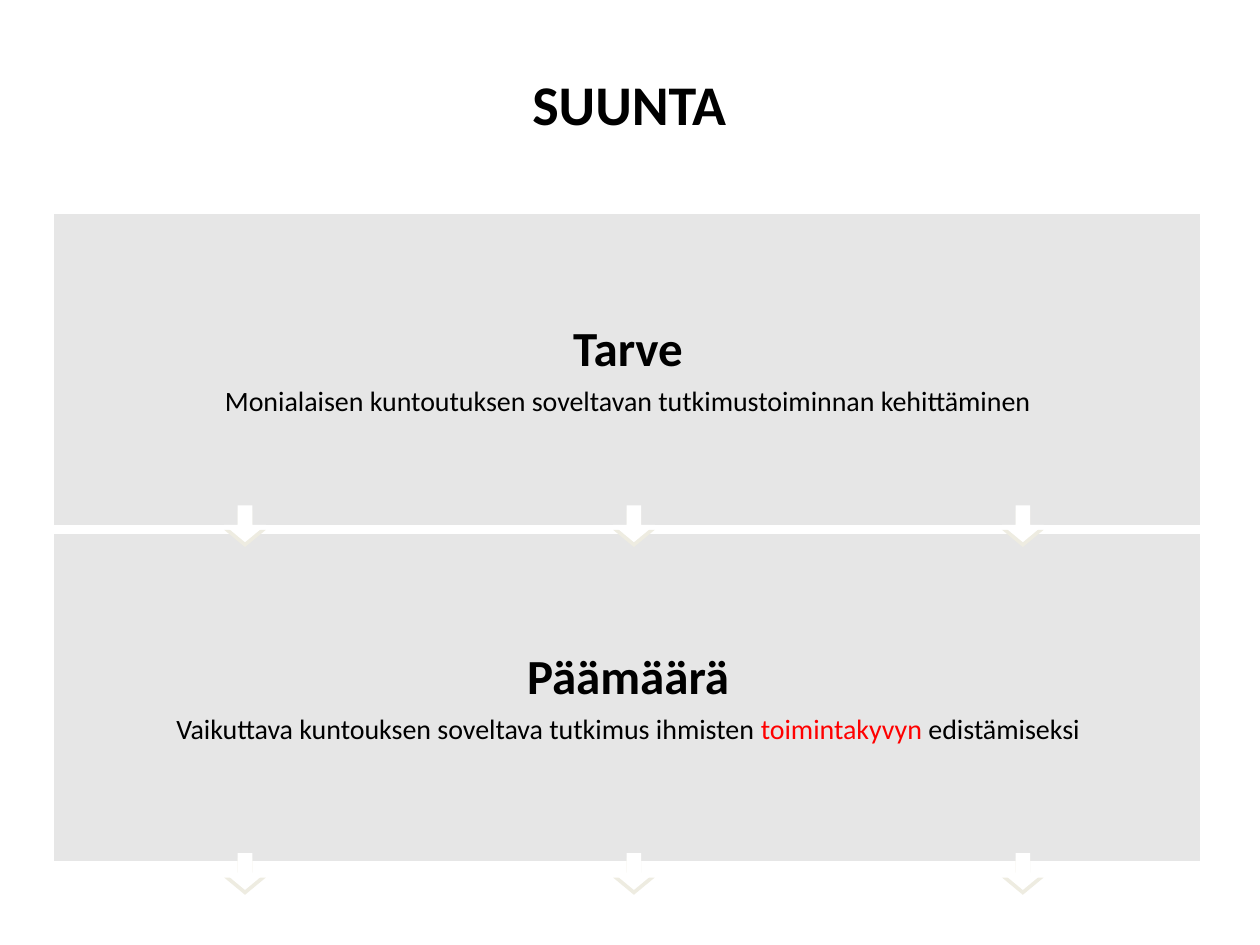
"""Build the SUUNTA slide: need and goal in a table, with rows of arrows."""
from lxml import etree
from pptx import Presentation
from pptx.dml.color import RGBColor
from pptx.enum.shapes import MSO_SHAPE
from pptx.enum.text import MSO_ANCHOR, PP_ALIGN
from pptx.oxml import parse_xml
from pptx.oxml.ns import qn
from pptx.util import Cm, Pt

CENTER = PP_ALIGN.CENTER
MIDDLE = MSO_ANCHOR.MIDDLE
DOWN_ARROW = MSO_SHAPE.DOWN_ARROW

BLACK = RGBColor(0x00, 0x00, 0x00)
WHITE = RGBColor(0xFF, 0xFF, 0xFF)
RED = RGBColor(0xFF, 0x00, 0x00)
GREY = RGBColor(0xE6, 0xE6, 0xE6)
IVORY = RGBColor(0xEE, 0xEC, 0xE1)

FONT = "Calibri"
NAMESPACE = 'xmlns:a="http://schemas.openxmlformats.org/drawingml/2006/main"'

ROWS = [
    (Cm(6.45), "Tarve",
     [("Monialaisen kuntoutuksen soveltavan tutkimustoiminnan kehittäminen", BLACK)]),
    (Cm(6.78), "Päämäärä",
     [("Vaikuttava kuntouksen soveltava tutkimus ihmisten", BLACK),
      (" toimintakyvyn ", RED),
      ("edistämiseksi", BLACK)]),
]


def style_paragraph(para, size, bold, space_before):
    para.alignment = CENTER
    para.space_before = space_before
    para.font.name = FONT
    para.font.size = size
    para.font.bold = bold
    para.font.color.rgb = BLACK


def add_borders(cell, width, color):
    properties = cell._tc.get_or_add_tcPr()
    for side in ("lnL", "lnR", "lnT", "lnB"):
        line = etree.SubElement(properties, qn(f"a:{side}"), w=str(width))
        fill = etree.SubElement(line, qn("a:solidFill"))
        etree.SubElement(fill, qn("a:srgbClr"), val=str(color))


deck = Presentation()
deck.slide_width, deck.slide_height = Cm(25.4), Cm(19.05)
page = deck.slides.add_slide(deck.slide_layouts[5])

title = page.shapes.title
title.left, title.top, title.width, title.height = Cm(10.46), Cm(1.27), Cm(4.45), Cm(1.63)
title.text_frame.text = "SUUNTA"
title.text_frame.word_wrap = False
title.text_frame.vertical_anchor = MIDDLE
style_paragraph(title.text_frame.paragraphs[0], Pt(32), True, Pt(0))

table = page.shapes.add_table(len(ROWS), 1, Cm(0.99), Cm(4.22), Cm(23.29), Cm(13.23)).table
table.first_row = table.horz_banding = False
for index, (height, heading, spans) in enumerate(ROWS):
    table.rows[index].height = height
    cell = table.cell(index, 0)
    add_borders(cell, Pt(6), WHITE)
    cell.fill.solid()
    cell.fill.fore_color.rgb = GREY
    cell.vertical_anchor = MIDDLE
    cell.margin_left, cell.margin_right = Cm(0.3), Cm(0.25)
    cell.text_frame.text = heading
    style_paragraph(cell.text_frame.paragraphs[0], Pt(28), True, Pt(5.6))
    para = cell.text_frame.add_paragraph()
    style_paragraph(para, Pt(16), False, Pt(3.2))
    for words, color in spans:
        span = para.add_run()
        span.text = words
        span.font.color.rgb = color

for top in (Cm(10.19), Cm(17.2)):
    for column in range(3):
        arrow = page.shapes.add_shape(
            DOWN_ARROW, Cm(4.52 + 7.84 * column), top, Cm(0.84), Cm(0.74))
        arrow.adjustments[0] = 0.35
        arrow.adjustments[1] = 0.47
        arrow.fill.solid()
        arrow.fill.fore_color.rgb = WHITE
        arrow.line.fill.background()
        arrow.shadow.inherit = False
        effects = arrow._element.spPr.find(qn("a:effectLst"))
        effects.append(parse_xml(
            f'<a:outerShdw {NAMESPACE} blurRad="0" dist="{Pt(2.8)}" dir="5400000" '
            f'rotWithShape="0"><a:srgbClr val="{IVORY}"/></a:outerShdw>'))

deck.save("out.pptx")
